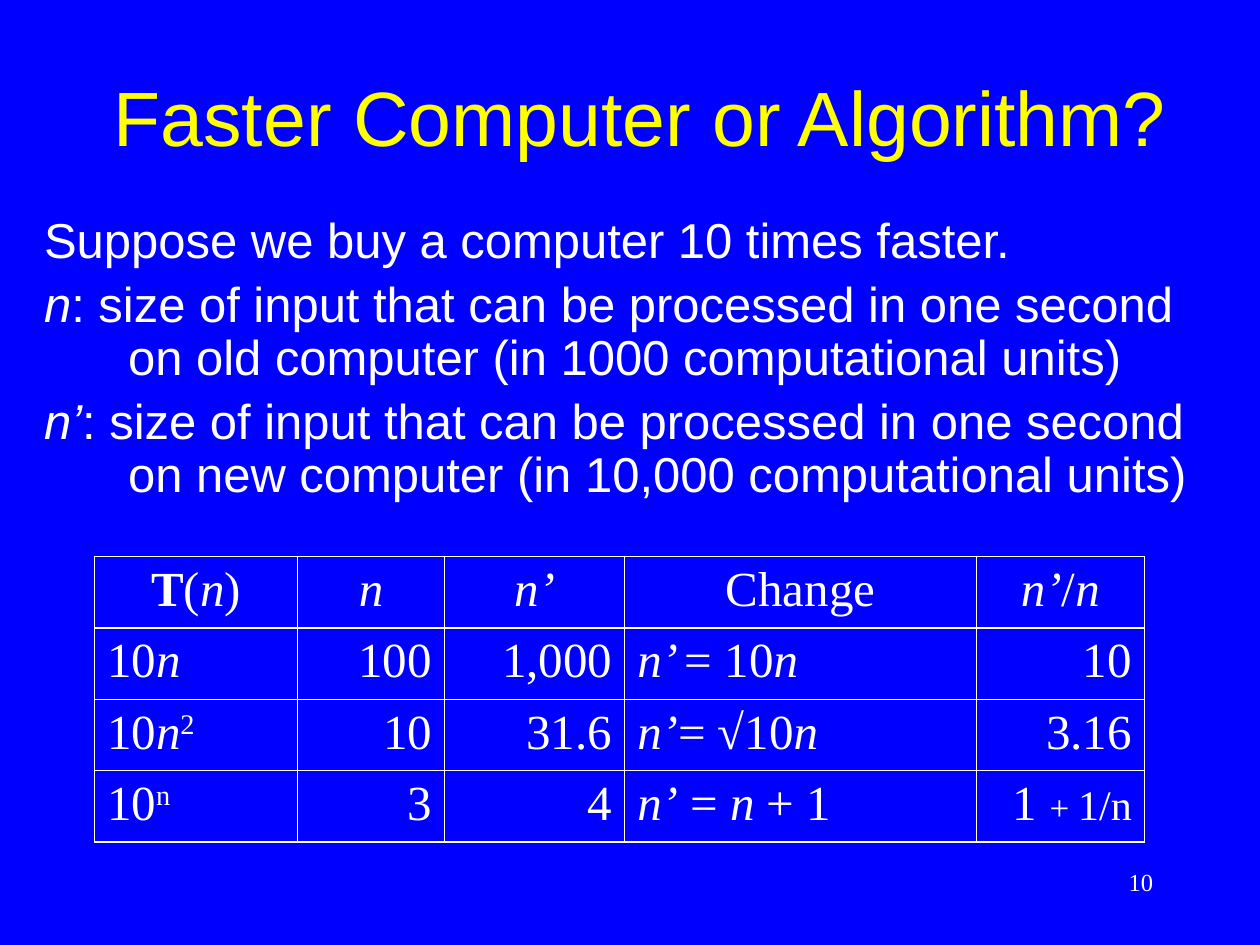
import pptx
import pptx.util
import pptx.dml.color
import pptx.enum.text
import pptx.oxml.ns
from lxml import etree

Pt = pptx.util.Pt
RGB = pptx.dml.color.RGBColor.from_string
ALIGN = pptx.enum.text.PP_ALIGN
ANCHOR = pptx.enum.text.MSO_ANCHOR

# Rich text is a list of (text, style) runs; styles are keys of RUN_STYLES.
TITLE = [("Faster Computer or Algorithm?", "plain")]
BODY = [
    [("Suppose we buy a computer 10 times faster.", "plain")],
    [("n", "italic"),
     (": size of input that can be processed in one second on old computer "
      "(in 1000 computational units)", "plain")],
    [("n’", "italic"),
     (": size of input that can be processed in one second on new computer "
      "(in 10,000 computational units)", "plain")],
]
HEADER = [
    [("T", "bold"), ("(", "plain"), ("n", "italic"), (")", "plain")],
    [("n", "italic")],
    [("n’", "italic")],
    [("Change", "plain")],
    [("n’", "italic"), ("/", "plain"), ("n", "italic")],
]
GROWTH_ROWS = [
    [[("10", "plain"), ("n", "italic")],
     [("100", "plain")],
     [("1,000", "plain")],
     [("n’ ", "italic"), ("= 10", "plain"), ("n", "italic")],
     [("10", "plain")]],
    [[("10", "plain"), ("n", "italic"), ("2", "super")],
     [("10", "plain")],
     [("31.6", "plain")],
     [("n’", "italic"), ("= √10", "plain"), ("n", "italic")],
     [("3.16", "plain")]],
    [[("10", "plain"), ("n", "super")],
     [("3", "plain")],
     [("4", "plain")],
     [("n’", "italic"), (" = ", "plain"), ("n", "italic"), (" + 1", "plain")],
     [("1 ", "plain"), ("+ ", "small"), ("1/n", "medium")]],
]
PAGE_NUMBER = [("10", "plain")]

THEME = {
    "background": "0000FF",
    "border": "FFFFFF",
    "title": {"name": "Arial", "size": 44, "color": "FFFF00"},
    "body": {"name": "Arial", "size": 28, "color": "FFFFFF"},
    "table": {"name": "Times New Roman", "size": 28, "color": "FFFFFF"},
    "number": {"name": "Times New Roman", "size": 14, "color": "FFFFFF"},
}
RUN_STYLES = {
    "plain": {},
    "italic": {"italic": True},
    "bold": {"bold": True},
    "small": {"size": Pt(20)},
    "medium": {"size": Pt(24)},
    "super": {},
}

SLIDE_SIZE = (720, 540)
TITLE_BOX = (42, 30, 648, 72)
BODY_BOX = (18, 120, 690, 318)
NUMBER_BOX = (516, 492, 150, 36)
TABLE_ORIGIN = (54, 318)
COLUMN_WIDTHS = [116, 84, 103, 201, 96]
COLUMN_ALIGN = [ALIGN.LEFT, ALIGN.RIGHT, ALIGN.RIGHT, ALIGN.LEFT, ALIGN.RIGHT]
ROW_HEIGHT = 40.8
HANGING_INDENT = 48


def set_all(target, values):
    for attribute, value in values.items():
        setattr(target, attribute, value)


def place(shape, box):
    set_all(shape, dict(zip(("left", "top", "width", "height"), map(Pt, box))))


def write(paragraph, runs, font, **formats):
    set_all(paragraph, formats)
    for text, style in runs:
        run = paragraph.add_run()
        run.text = text
        set_all(run.font, {"name": font["name"], "size": Pt(font["size"]),
                           **RUN_STYLES[style]})
        run.font.color.rgb = RGB(font["color"])
        if style == "super":
            run.font._element.set("baseline", "30000")


def hang(paragraph):
    """Give a hanging indent without a bullet."""
    properties = paragraph._p.get_or_add_pPr()
    properties.set("marL", str(Pt(HANGING_INDENT)))
    properties.set("indent", str(-Pt(HANGING_INDENT)))
    etree.SubElement(properties, pptx.oxml.ns.qn("a:buNone"))


def add_borders(cell):
    properties = cell._tc.get_or_add_tcPr()
    for position, side in enumerate(("lnL", "lnR", "lnT", "lnB")):
        line = etree.Element(pptx.oxml.ns.qn(f"a:{side}"), w=str(Pt(1)))
        fill = etree.SubElement(line, pptx.oxml.ns.qn("a:solidFill"))
        etree.SubElement(fill, pptx.oxml.ns.qn("a:srgbClr"), val=THEME["border"])
        properties.insert(position, line)


def add_growth_table(slide):
    rows = [HEADER] + GROWTH_ROWS
    size = (sum(COLUMN_WIDTHS), ROW_HEIGHT * len(rows))
    table = slide.shapes.add_table(
        len(rows), len(COLUMN_WIDTHS), *map(Pt, TABLE_ORIGIN + size)).table
    set_all(table, {"first_row": False, "horz_banding": False})
    for column, width in zip(table.columns, COLUMN_WIDTHS):
        column.width = Pt(width)
    for r, row in enumerate(rows):
        table.rows[r].height = Pt(ROW_HEIGHT)
        for c, runs in enumerate(row):
            cell = table.cell(r, c)
            cell.fill.background()
            add_borders(cell)
            write(cell.text_frame.paragraphs[0], runs, THEME["table"],
                  alignment=COLUMN_ALIGN[c] if r else ALIGN.CENTER)


def main():
    deck = pptx.Presentation()
    deck.slide_width, deck.slide_height = map(Pt, SLIDE_SIZE)
    slide = deck.slides.add_slide(deck.slide_layouts[1])
    slide.background.fill.solid()
    slide.background.fill.fore_color.rgb = RGB(THEME["background"])

    title, body = slide.placeholders
    no_fit = {"word_wrap": True, "auto_size": pptx.enum.text.MSO_AUTO_SIZE.NONE}
    place(title, TITLE_BOX)
    set_all(title.text_frame, {**no_fit, "vertical_anchor": ANCHOR.MIDDLE})
    write(title.text_frame.paragraphs[0], TITLE, THEME["title"],
          alignment=ALIGN.CENTER)

    place(body, BODY_BOX)
    set_all(body.text_frame, {**no_fit, "vertical_anchor": ANCHOR.TOP})
    for index, runs in enumerate(BODY):
        frame = body.text_frame
        paragraph = frame.add_paragraph() if index else frame.paragraphs[0]
        write(paragraph, runs, THEME["body"], line_spacing=0.9,
              space_before=Pt(6.4))
        hang(paragraph)

    add_growth_table(slide)

    number = slide.shapes.add_textbox(*map(Pt, NUMBER_BOX))
    number.text_frame.word_wrap = True
    write(number.text_frame.paragraphs[0], PAGE_NUMBER, THEME["number"],
          alignment=ALIGN.RIGHT)
    deck.save("out.pptx")


if __name__ == "__main__":
    main()
